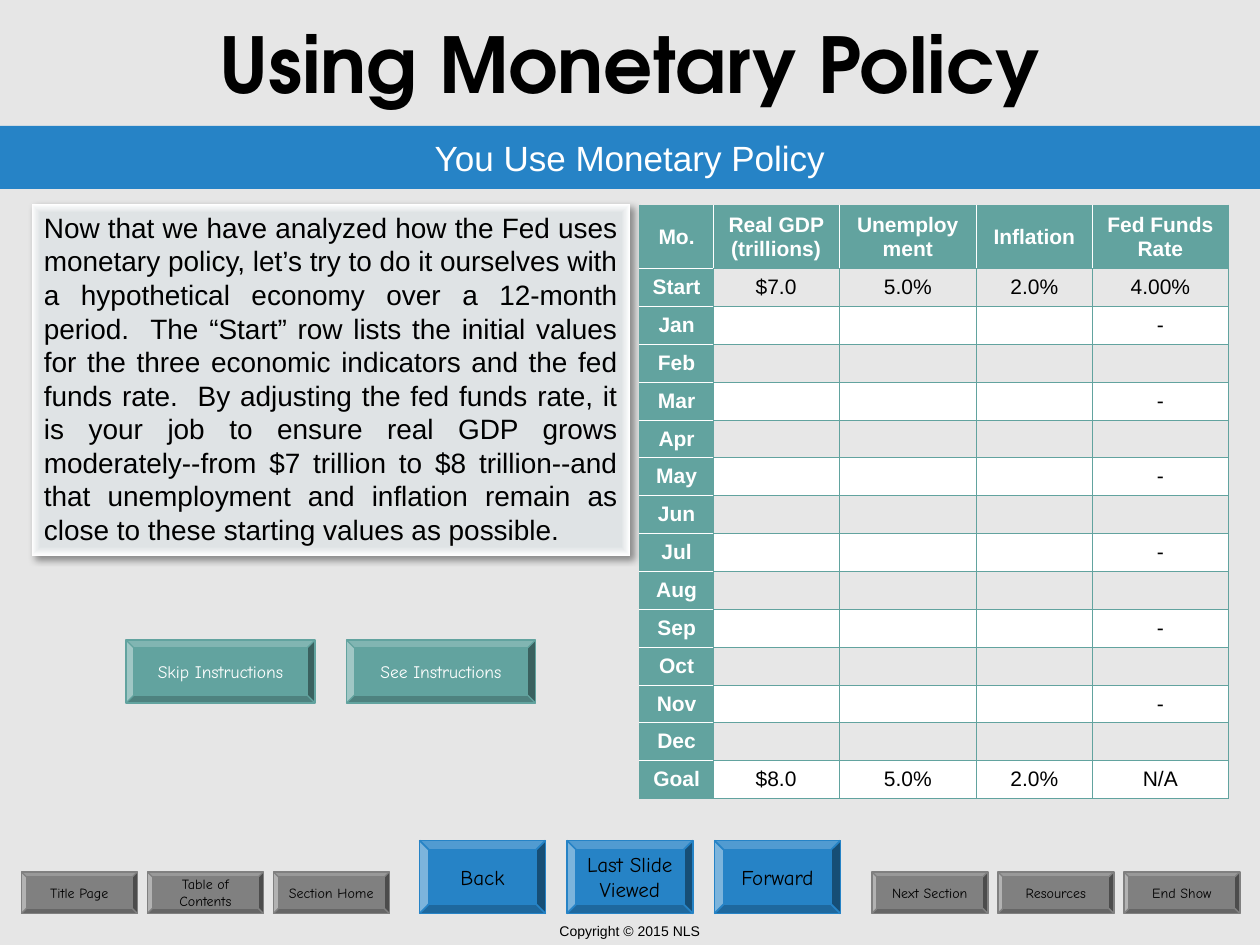
import pptx
import pptx.dml.color
import pptx.enum.shapes
import pptx.enum.text
import pptx.oxml
import pptx.oxml.ns
import pptx.util
from pptx.util import Inches

COLORS = {
    "background": "E6E6E6", "blue": "2683C6", "teal": "62A39F", "gray": "808080",
    "band": "E7E7E7", "panel": "DFE3E5", "white": "FFFFFF", "black": "000000",
}
ALIGN = pptx.enum.text.PP_ALIGN
ANCHOR = pptx.enum.text.MSO_ANCHOR
SHAPE = pptx.enum.shapes.MSO_SHAPE
NAMESPACE = pptx.oxml.ns.nsdecls("a")

TITLE = "Using Monetary Policy"
SUBTITLE = "You Use Monetary Policy"
COPYRIGHT = "Copyright © 2015 NLS"
EXPLANATION = (
    "Now that we have analyzed how the Fed uses monetary policy, let’s try to do it "
    "ourselves with a hypothetical economy over a 12-month period.  The “Start” row lists "
    "the initial values for the three economic indicators and the fed funds rate.  By "
    "adjusting the fed funds rate, it is your job to ensure real GDP grows moderately--from "
    "$7 trillion to $8 trillion--and that unemployment and inflation remain as close to "
    "these starting values as possible."
)
HEADER = ["Mo.", "Real GDP (trillions)", "Unemployment", "Inflation", "Fed Funds Rate"]
MONTHS = ["Jan", "Feb", "Mar", "Apr", "May", "Jun",
          "Jul", "Aug", "Sep", "Oct", "Nov", "Dec"]
ROWS = [
    HEADER,
    ["Start", "$7.0", "5.0%", "2.0%", "4.00%"],
    *([month, "", "", "", "" if index % 2 else "-"] for index, month in enumerate(MONTHS)),
    ["Goal", "$8.0", "5.0%", "2.0%", "N/A"],
]
COLUMN_WIDTHS = [0.58, 1, 1.09, 0.92, 1.08]
HEADER_HEIGHT, ROW_HEIGHT = 0.5, 0.3

# Each group: labels, left of first, step, top, width, height, bevel, line width, fill, format
MAIN_FORMAT = {"size": 12, "name": "Comic Neue", "color": "black"}
SMALL_FORMAT = {"size": 8, "name": "Comic Neue", "color": "black"}
CHOICE_FORMAT = {"size": 10, "name": "Comic Neue", "color": "white"}
BUTTON_GROUPS = [
    (["Back", "Last Slide\nViewed", "Forward"],
     3.33, 1.17, 6.67, 1, 0.58, 0.125, 1, "blue", MAIN_FORMAT),
    (["Title Page", "Table of\nContents", "Section Home"],
     0.17, 1, 6.92, 0.92, 0.33, 0.125, 0.75, "gray", SMALL_FORMAT),
    (["Next Section", "Resources", "End Show"],
     6.92, 1, 6.92, 0.92, 0.33, 0.125, 0.75, "gray", SMALL_FORMAT),
    (["Skip Instructions", "See Instructions"],
     1, 1.75, 5.08, 1.5, 0.5, 0.125, 0.75, "teal", CHOICE_FORMAT),
]


def rgb(name):
    return pptx.dml.color.RGBColor.from_string(COLORS[name])


def paint(fill, color):
    fill.solid()
    fill.fore_color.rgb = rgb(color)


def write(frame, text, font_format, align=ALIGN.CENTER, anchor=ANCHOR.MIDDLE, wrap=True):
    frame.word_wrap = wrap
    frame.vertical_anchor = anchor
    frame.text = text
    for paragraph in frame.paragraphs:
        paragraph.alignment = align
        for run in paragraph.runs:
            for name, value in font_format.items():
                if name == "color":
                    run.font.color.rgb = rgb(value)
                else:
                    setattr(run.font, name, pptx.util.Pt(value) if name == "size" else value)


def add_text(slide, box, text, font_format, **layout):
    shape = slide.shapes.add_textbox(*map(Inches, box))
    write(shape.text_frame, text, font_format, **layout)


def add_plain_shape(slide, kind, box, color):
    shape = slide.shapes.add_shape(kind, *map(Inches, box))
    shape.shadow.inherit = False
    paint(shape.fill, color)
    shape.line.fill.background()
    return shape


def add_buttons(slide, labels, left, step, top, width, height, bevel, line, color, font_format):
    for index, label in enumerate(labels):
        box = (left + index * step, top, width, height)
        button = add_plain_shape(slide, SHAPE.BEVEL, box, color)
        button.adjustments[0] = bevel
        paint(button.line.fill, color)
        button.line.width = pptx.util.Pt(line)
        write(button.text_frame, label, font_format, wrap=False)


def add_explanation(slide):
    panel = add_plain_shape(slide, SHAPE.RECTANGLE, (0.25, 1.62, 4.75, 2.79), "panel")
    properties = panel.element.spPr
    gradient = pptx.oxml.parse_xml(
        f'<a:gradFill {NAMESPACE} rotWithShape="1"><a:gsLst>'
        f'<a:gs pos="95000"><a:srgbClr val="{COLORS["panel"]}"/></a:gs>'
        f'<a:gs pos="100000"><a:srgbClr val="{COLORS["white"]}"/></a:gs></a:gsLst>'
        '<a:path path="shape"><a:fillToRect l="50000" t="50000" r="50000" b="50000"/>'
        '</a:path></a:gradFill>')
    properties.replace(properties.find(pptx.oxml.ns.qn("a:solidFill")), gradient)
    shadow = pptx.oxml.parse_xml(
        f'<a:outerShdw {NAMESPACE} blurRad="{pptx.util.Pt(4)}" dist="{pptx.util.Pt(3)}" '
        f'dir="2700000" algn="tl" rotWithShape="0"><a:srgbClr val="{COLORS["black"]}">'
        '<a:alpha val="40000"/></a:srgbClr></a:outerShdw>')
    properties.find(pptx.oxml.ns.qn("a:effectLst")).append(shadow)
    write(panel.text_frame, EXPLANATION, {"size": 16, "name": "Arial", "color": "black"},
          align=ALIGN.JUSTIFY, anchor=ANCHOR.TOP)


def set_borders(cell, borders):
    """Put the four lines ahead of the cell's fill, as the schema orders them."""
    properties = cell._tc.get_or_add_tcPr()
    for index, (side, (color, width)) in enumerate(borders.items()):
        properties.insert(index, pptx.oxml.parse_xml(
            f'<a:{side} {NAMESPACE} w="{pptx.util.Pt(width)}"><a:solidFill>'
            f'<a:srgbClr val="{COLORS[color]}"/></a:solidFill></a:{side}>'))


def cell_borders(row, column):
    last_row, last_column = len(ROWS) - 1, len(HEADER) - 1

    def vertical(edge):
        if edge in (0, last_column + 1):
            return "teal", 1
        return "white" if row == 0 else "teal", 0.25

    def horizontal(edge):
        if edge in (0, last_row + 1):
            return "teal", 1
        return "white" if column == 0 else "teal", 1 if edge == last_row else 0.25

    return {"lnL": vertical(column), "lnR": vertical(column + 1),
            "lnT": horizontal(row), "lnB": horizontal(row + 1)}


def add_economy_table(slide):
    height = HEADER_HEIGHT + ROW_HEIGHT * (len(ROWS) - 1)
    table = slide.shapes.add_table(
        len(ROWS), len(HEADER), Inches(5.08), Inches(1.63),
        Inches(sum(COLUMN_WIDTHS)), Inches(height)).table
    for column, width in zip(table.columns, COLUMN_WIDTHS):
        column.width = Inches(width)
    for row_index, values in enumerate(ROWS):
        table.rows[row_index].height = Inches(ROW_HEIGHT if row_index else HEADER_HEIGHT)
        for column_index, value in enumerate(values):
            cell = table.cell(row_index, column_index)
            heading = row_index == 0 or column_index == 0
            paint(cell.fill, "teal" if heading else "band" if row_index % 2 else "white")
            cell.vertical_anchor = ANCHOR.MIDDLE
            write(cell.text_frame, value, {
                "size": 12, "name": "Arial", "bold": heading,
                "color": "white" if heading else "black"}, anchor=None)
            if not value:
                cell.text_frame.paragraphs[0]._p.append(
                    pptx.oxml.parse_xml(f'<a:endParaRPr {NAMESPACE} sz="1200"/>'))
            set_borders(cell, cell_borders(row_index, column_index))


def main():
    presentation = pptx.Presentation()
    presentation.slide_width, presentation.slide_height = Inches(10), Inches(7.5)
    slide = presentation.slides.add_slide(presentation.slide_layouts[6])
    paint(slide.background.fill, "background")

    add_text(slide, (0, 7.27, 10, 0.23), COPYRIGHT,
             {"size": 8, "name": "Arial", "color": "black"}, anchor=ANCHOR.TOP)
    add_text(slide, (0, 0, 10, 1), TITLE,
             {"size": 44, "name": "TeX Gyre Adventor", "color": "black", "bold": True})
    banner = add_plain_shape(slide, SHAPE.RECTANGLE, (0, 1, 10, 0.5), "blue")
    write(banner.text_frame, SUBTITLE, {"size": 20, "name": "Arial", "color": "white"})
    add_explanation(slide)
    add_economy_table(slide)
    for group in BUTTON_GROUPS:
        add_buttons(slide, *group)

    presentation.save("out.pptx")


if __name__ == "__main__":
    main()
